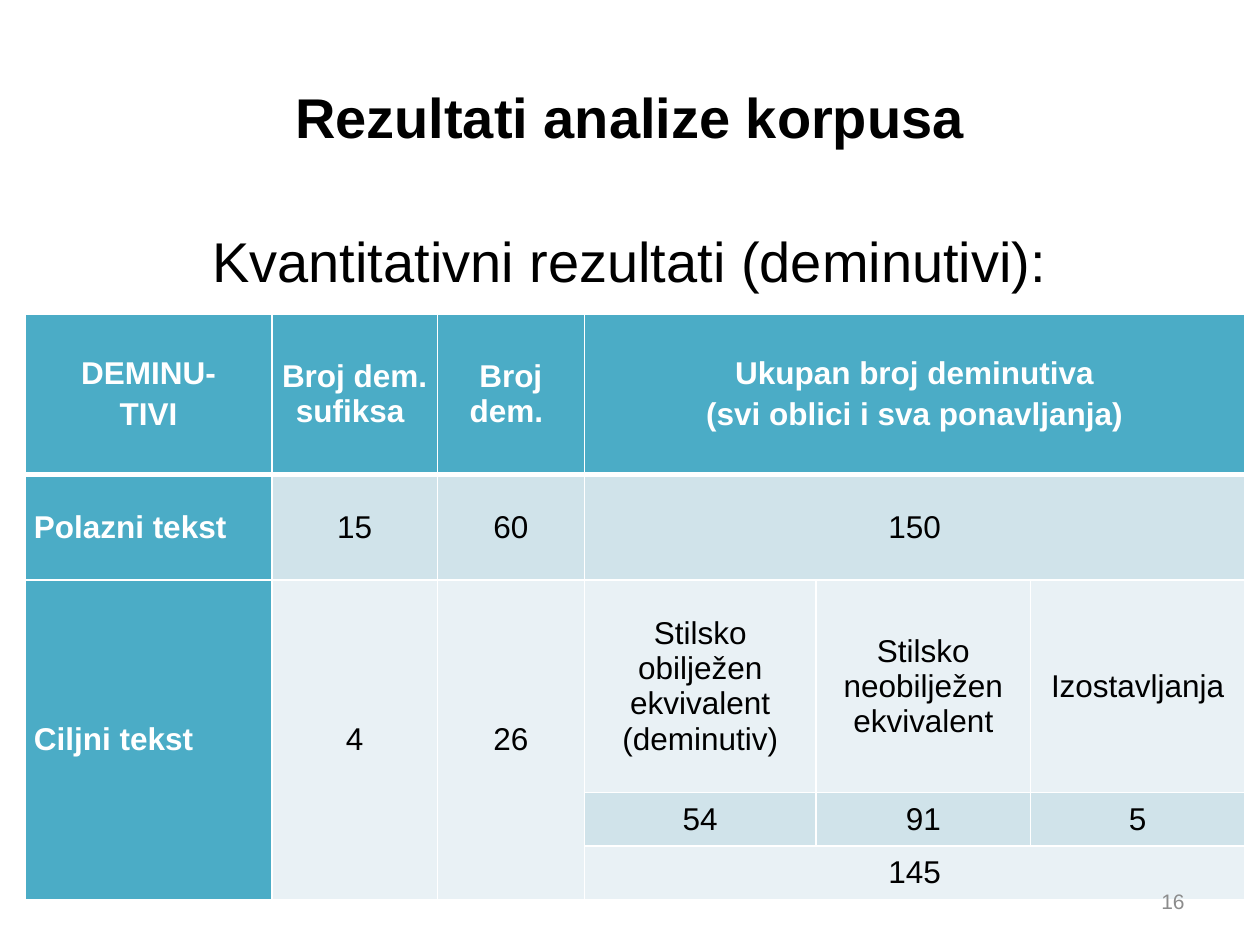
from dataclasses import dataclass

from lxml import etree
from pptx import Presentation
from pptx.dml.color import RGBColor
from pptx.enum.text import MSO_ANCHOR, PP_ALIGN
from pptx.oxml.ns import qn
from pptx.util import Pt

LEFT, CENTER, RIGHT = PP_ALIGN.LEFT, PP_ALIGN.CENTER, PP_ALIGN.RIGHT
TOP, MIDDLE = MSO_ANCHOR.TOP, MSO_ANCHOR.MIDDLE
TITLE_ONLY = 5


@dataclass(frozen=True)
class Theme:
    font: str = "Arial"
    ink: str = "000000"
    paper: str = "FFFFFF"
    accent: str = "4BACC6"
    band_dark: str = "D0E3EA"
    band_light: str = "E9F1F5"
    muted: str = "8C8C8C"
    heading: int = 32
    table: int = 18
    small: int = 12
    rule: int = 1
    header_rule: int = 3


THEME = Theme()

COLUMN_WIDTHS = (141, 94.5, 84, 132.5, 122.5, 122.5)
ROW_HEIGHTS = (91.5, 60.5, 121.5, 30.5, 30.5)

# (row, column): lines of text
CELL_LINES = {
    (0, 0): ("DEMINU-", "TIVI"),
    (0, 1): ("Broj dem. sufiksa ",),
    (0, 2): ("Broj dem. ",),
    (0, 3): ("Ukupan broj deminutiva", "(svi oblici i sva ponavljanja)"),
    (1, 0): ("Polazni tekst",),
    (1, 1): ("15",),
    (1, 2): ("60",),
    (1, 3): ("150",),
    (2, 0): ("Ciljni tekst",),
    (2, 1): ("4",),
    (2, 2): ("26",),
    (2, 3): ("Stilsko obilježen ekvivalent (deminutiv)",),
    (2, 4): ("Stilsko neobilježen ekvivalent",),
    (2, 5): ("Izostavljanja",),
    (3, 3): ("54",),
    (3, 4): ("91",),
    (3, 5): ("5",),
    (4, 3): ("145",),
}

# First and last cell of each merged area
MERGES = [((row, 3), (row, 5)) for row in (0, 1, 4)]
MERGES += [((2, column), (4, column)) for column in range(3)]


def write_lines(frame, lines, size, color, bold=False, align=CENTER, **spacing):
    """Fill a text frame with one formatted paragraph per line."""
    frame.text = "\n".join(lines)
    for paragraph in frame.paragraphs:
        paragraph.alignment = align
        for name, points in spacing.items():
            setattr(paragraph, name, Pt(points))
        font = paragraph.runs[0].font
        for name, value in {"name": THEME.font, "size": Pt(size), "bold": bold}.items():
            setattr(font, name, value)
        font.color.rgb = RGBColor.from_string(color)


def place(shape, left, top, width, height):
    box = {"left": left, "top": top, "width": width, "height": height}
    for name, points in box.items():
        setattr(shape, name, Pt(points))


def add_label(slide, box, text, size, color, anchor=TOP, **format_values):
    label = slide.shapes.add_textbox(*map(Pt, box))
    label.text_frame.word_wrap = True
    label.text_frame.vertical_anchor = anchor
    write_lines(label.text_frame, [text], size, color, **format_values)


def set_borders(cell, widths):
    properties = cell._tc.get_or_add_tcPr()
    for side, points in widths.items():
        line = etree.SubElement(properties, qn(f"a:ln{side}"), w=str(Pt(points)))
        fill = etree.SubElement(line, qn("a:solidFill"))
        etree.SubElement(fill, qn("a:srgbClr"), val=THEME.paper)


def format_cell(cell, row, column):
    # White rules, thicker under the header row
    widths = dict.fromkeys("LRTB", THEME.rule)
    if row < 2:
        widths["B" if row == 0 else "T"] = THEME.header_rule
    set_borders(cell, widths)

    # Accent header row and first column, alternating bands elsewhere
    is_header = row == 0 or column == 0
    band = THEME.band_dark if row % 2 else THEME.band_light
    cell.fill.solid()
    cell.fill.fore_color.rgb = RGBColor.from_string(THEME.accent if is_header else band)

    margins = {"margin_left": 5, "margin_right": 5, "margin_top": 0, "margin_bottom": 0}
    for name, points in margins.items():
        setattr(cell, name, Pt(points))
    cell.vertical_anchor = MIDDLE

    if (row, column) in CELL_LINES:
        write_lines(
            cell.text_frame,
            CELL_LINES[row, column],
            THEME.table,
            THEME.paper if is_header else THEME.ink,
            bold=is_header,
            align=LEFT if column == 0 and row > 0 else CENTER,
            space_after=3,
        )


def add_results_table(slide, left, top):
    table = slide.shapes.add_table(
        len(ROW_HEIGHTS), len(COLUMN_WIDTHS), Pt(left), Pt(top),
        Pt(sum(COLUMN_WIDTHS)), Pt(sum(ROW_HEIGHTS)),
    ).table
    for column, width in zip(table.columns, COLUMN_WIDTHS):
        column.width = Pt(width)
    for row, height in zip(table.rows, ROW_HEIGHTS):
        row.height = Pt(height)
    for first, last in MERGES:
        table.cell(*first).merge(table.cell(*last))
    for row in range(len(ROW_HEIGHTS)):
        for column in range(len(COLUMN_WIDTHS)):
            format_cell(table.cell(row, column), row, column)


def main():
    deck = Presentation()
    deck.slide_width, deck.slide_height = Pt(720), Pt(540)
    slide = deck.slides.add_slide(deck.slide_layouts[TITLE_ONLY])

    # Title
    title = slide.shapes.title
    place(title, 36, 21.6, 648, 90)
    title.text_frame.vertical_anchor = MIDDLE
    write_lines(title.text_frame, ["Rezultati analize korpusa"],
                THEME.heading, THEME.ink, bold=True)

    # Subheading
    add_label(slide, (36, 126, 648, 50), "Kvantitativni rezultati (deminutivi):",
              THEME.heading, THEME.ink, space_before=3)

    # Results
    add_results_table(slide, 14.4, 179.5)

    # Page number
    add_label(slide, (516, 500.5, 168, 28.8), "16", THEME.small, THEME.muted,
              anchor=MIDDLE, align=RIGHT)

    deck.save("out.pptx")


if __name__ == "__main__":
    main()
